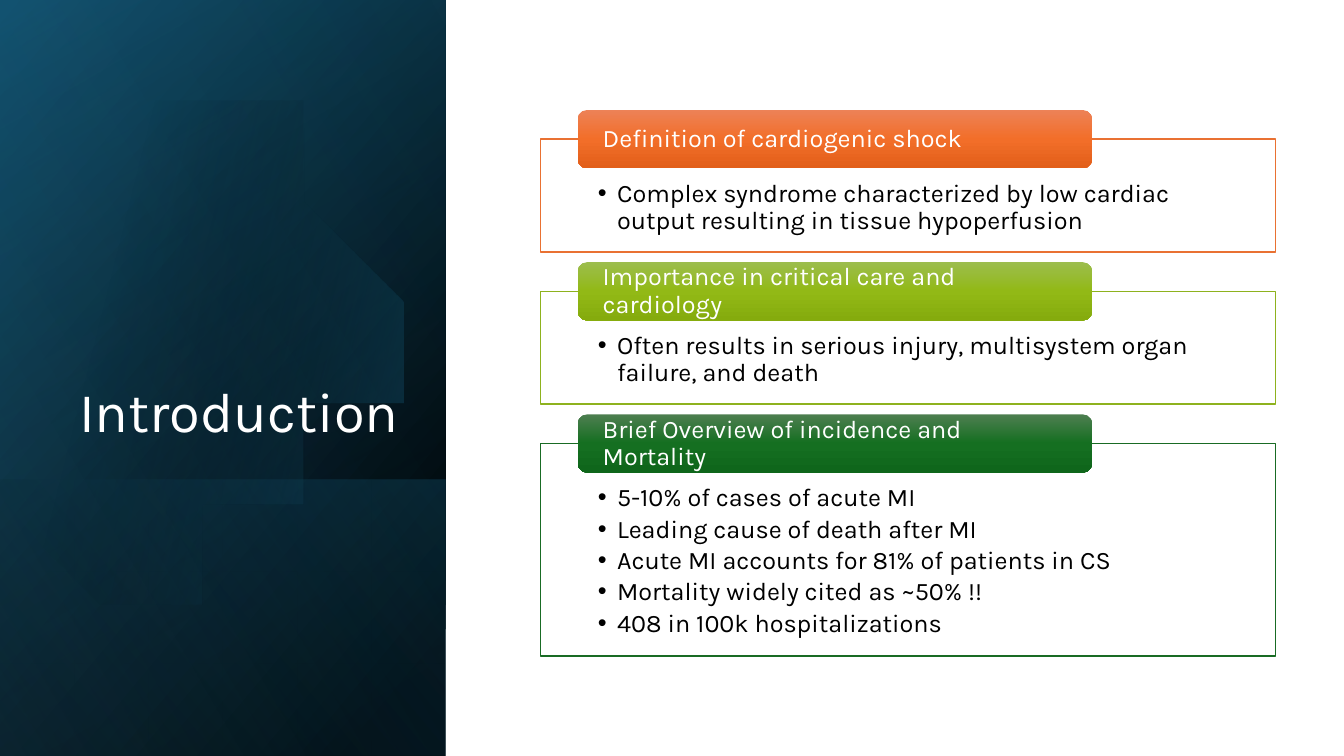
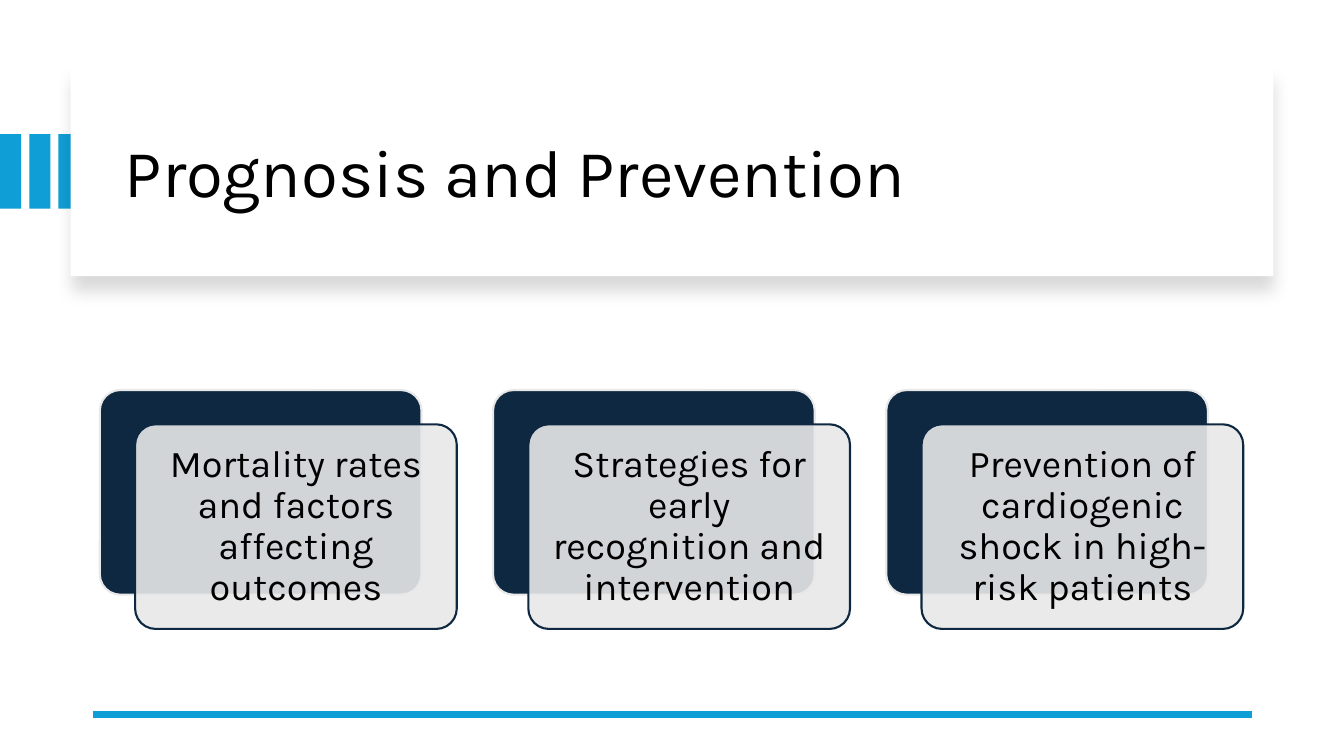
import math

from lxml import etree
from pptx import Presentation
from pptx.dml.color import RGBColor
from pptx.enum.shapes import MSO_CONNECTOR, MSO_SHAPE
from pptx.enum.text import MSO_ANCHOR, PP_ALIGN
from pptx.oxml import parse_xml
from pptx.oxml.ns import nsdecls, qn
from pptx.util import Inches, Pt

RECT, ROUNDED = MSO_SHAPE.RECTANGLE, MSO_SHAPE.ROUNDED_RECTANGLE
STRAIGHT = MSO_CONNECTOR.STRAIGHT
LEFT, CENTER, RIGHT = PP_ALIGN.LEFT, PP_ALIGN.CENTER, PP_ALIGN.RIGHT
TOP, MIDDLE, BOTTOM = MSO_ANCHOR.TOP, MSO_ANCHOR.MIDDLE, MSO_ANCHOR.BOTTOM

FONT = "Karla"
BLACK = RGBColor(0x00, 0x00, 0x00)
WHITE = RGBColor(0xFF, 0xFF, 0xFF)
PALE = RGBColor(0xE8, 0xE8, 0xE8)
NAVY = RGBColor(0x0E, 0x28, 0x41)
DEEP_TEAL = RGBColor(0x10, 0x48, 0x62)
TEAL = RGBColor(0x15, 0x60, 0x82)
SKY = RGBColor(0x46, 0xB1, 0xE1)
BLUE = RGBColor(0x0F, 0x9E, 0xD5)
ORANGE = RGBColor(0xE9, 0x71, 0x32)
LIME = RGBColor(0x8E, 0xB2, 0x1E)
GREEN = RGBColor(0x19, 0x6B, 0x24)
ORANGE_SHADES = (RGBColor(0xED, 0x82, 0x57), RGBColor(0xF2, 0x6E, 0x29),
                 RGBColor(0xE2, 0x5F, 0x1A))
LIME_SHADES = (RGBColor(0x9C, 0xBD, 0x4E), RGBColor(0x92, 0xB9, 0x16),
               RGBColor(0x85, 0xAB, 0x0D))
GREEN_SHADES = (RGBColor(0x4D, 0x7E, 0x50), RGBColor(0x15, 0x6F, 0x21),
                RGBColor(0x0F, 0x66, 0x1B))

INTRO_TOPICS = [
    ("Definition of cardiogenic shock", ORANGE, ORANGE_SHADES, 1.12,
     ["Complex syndrome\u00a0characterized by low cardiac output resulting in "
      "tissue hypoperfusion"]),
    ("Importance in critical care and cardiology", LIME, LIME_SHADES, 1.12,
     ["Often results in serious injury, multisystem organ failure, and death"]),
    ("Brief Overview of incidence and Mortality", GREEN, GREEN_SHADES, 2.11,
     ["5-10% of cases of acute MI",
      "Leading cause of death after MI",
      "Acute MI accounts for 81% of patients in CS",
      "Mortality widely cited as ~50% !!",
      "408 in 100k hospitalizations"]),
]
PROGNOSIS_CARDS = [
    "Mortality rates and factors affecting outcomes",
    "Strategies for early recognition and intervention",
    "Prevention of cardiogenic shock in high-risk patients",
]


def style(shape, fill=None, line=None, line_width=1.0):
    shape.shadow.inherit = False
    if fill is not None:
        shape.fill.solid()
        shape.fill.fore_color.rgb = fill
    if line is None:
        shape.line.fill.background()
    else:
        shape.line.color.rgb = line
        shape.line.width = Pt(line_width)
    return shape


def add_box(slide, kind, box, **look):
    shape = slide.shapes.add_shape(kind, *map(Inches, box))
    return style(shape, **look)


def fill_gradient(shape, stops, angle):
    """Fill with (position %, colour, opacity %) stops, angle clockwise."""
    shape.fill.gradient()
    stop_xml = "".join(
        f'<a:gs pos="{pos * 1000}"><a:srgbClr val="{color}">'
        f'<a:alpha val="{opacity * 1000}"/></a:srgbClr></a:gs>'
        for pos, color, opacity in stops)
    gradient = parse_xml(
        f'<a:gradFill {nsdecls("a")} rotWithShape="1"><a:gsLst>{stop_xml}</a:gsLst>'
        f'<a:lin ang="{angle * 60000}" scaled="0"/></a:gradFill>')
    properties = shape.element.spPr
    properties.replace(properties.find(qn("a:gradFill")), gradient)


def set_opacity(shape, percent):
    color = shape.element.spPr.find(f'{qn("a:solidFill")}/{qn("a:srgbClr")}')
    etree.SubElement(color, qn("a:alpha"), val=str(percent * 1000))


def add_soft_shadow(shape):
    effects = shape.element.spPr.find(qn("a:effectLst"))
    effects.append(parse_xml(
        f'<a:outerShdw {nsdecls("a")} blurRad="{Pt(11)}" dist="{Pt(10)}" '
        f'dir="5400000" algn="t" rotWithShape="0"><a:srgbClr val="{BLACK}">'
        '<a:alpha val="15000"/></a:srgbClr></a:outerShdw>'))


def add_bullet(paragraph, indent):
    properties = paragraph._p.get_or_add_pPr()
    properties.set("marL", str(Inches(indent)))
    properties.set("indent", str(-Inches(indent)))
    etree.SubElement(properties, qn("a:buFont"), typeface="Arial")
    etree.SubElement(properties, qn("a:buChar"), char="•")


def write(shape, lines, size, color, align=LEFT, anchor=MIDDLE,
          insets=(0.1, 0.05, 0.1, 0.05), bulleted=False):
    """Write one paragraph per line; insets are left, top, right, bottom."""
    frame = shape.text_frame
    frame.word_wrap = True
    frame.vertical_anchor = anchor
    (frame.margin_left, frame.margin_top,
     frame.margin_right, frame.margin_bottom) = map(Inches, insets)
    for index, line in enumerate(lines):
        paragraph = frame.add_paragraph() if index else frame.paragraphs[0]
        paragraph.alignment = align
        paragraph.line_spacing = 0.9
        if bulleted:
            paragraph.space_after = Pt(3)
            add_bullet(paragraph, 0.19)
        run = paragraph.add_run()
        run.text = line
        run.font.name = FONT
        run.font.size = Pt(size)
        run.font.color.rgb = color


def add_title(slide, box, text, size, color, **layout):
    title = slide.shapes.add_textbox(*map(Inches, box))
    write(title, [text], size, color, **layout)


def add_disc(slide, center_x, center_y, radius):
    """Draw a disc cut off by the left edge of the slide."""
    cut = math.acos(-center_x / radius)
    steps = 90
    angles = [cut * (2 * step / steps - 1) for step in range(steps + 1)]
    points = [(center_x + radius * math.cos(a), center_y + radius * math.sin(a))
              for a in angles]
    outline = slide.shapes.build_freeform(*points[0], scale=Inches(1))
    outline.add_line_segments(points[1:], close=True)
    disc = style(outline.convert_to_shape())
    fill_gradient(disc, [(29, BLACK, 0), (100, TEAL, 43)], 14)


def add_gradient_panel(slide, box):
    left, top, width, height = box
    band_height = 2.74
    band = (left, top + height - band_height, width, band_height)

    def add_layer(area, stops, angle):
        fill_gradient(add_box(slide, RECT, area), stops, angle)

    add_layer(box, [(8, BLACK, 100), (100, DEEP_TEAL, 100)], 220)
    add_layer(box, [(0, BLACK, 0), (99, TEAL, 46)], 240)
    add_layer(band, [(2, TEAL, 29), (100, BLACK, 30)], 140)
    add_disc(slide, left + 1.43, top + 3.39, 2.28)
    add_layer(box, [(0, BLACK, 0), (99, SKY, 11)], 150)


def add_topic(slide, box, heading, color, shades, bullets):
    left, top, width, _ = box
    frame = add_box(slide, RECT, box, fill=WHITE, line=color)
    write(frame, bullets, 18, BLACK, anchor=TOP,
          insets=(0.57, 0.41, 0.57, 0.14), bulleted=True)
    tab = add_box(slide, ROUNDED, (left + 0.37, top - 0.29, 0.7 * width, 0.58))
    fill_gradient(tab, [(pos, shade, 100) for pos, shade in zip((0, 50, 100), shades)], 90)
    write(tab, [heading], 18, WHITE, insets=(0.22, 0, 0.2, 0))


def add_card(slide, box, text):
    left, top, width, height = box
    back = add_box(slide, ROUNDED, box, fill=NAVY, line=PALE, line_width=1.5)
    front = add_box(slide, ROUNDED, (left + 0.35, top + 0.34, width, height),
                    fill=PALE, line=NAVY, line_width=1.5)
    for layer in (back, front):
        layer.adjustments[0] = 0.1
    set_opacity(front, 90)
    write(front, [text], 27, BLACK, align=CENTER, insets=(0.17,) * 4)


def add_title_panel(slide, box, text):
    left, top, width, height = box
    for index in range(3):
        add_box(slide, RECT, (0.29 * index, top + 0.66, 0.21, 0.74), fill=BLUE)
    add_soft_shadow(add_box(slide, RECT, box, fill=WHITE))
    add_title(slide, (left + 0.44, top + 0.22, width - 0.8, 1.7), text, 48, BLACK)


def add_footer_rule(slide, left, right, y):
    rule = slide.shapes.add_connector(
        STRAIGHT, *map(Inches, (left, y, right, y)))
    rule.line.color.rgb = BLUE
    rule.line.width = Pt(4.5)
    etree.SubElement(rule._element.spPr, qn("a:effectLst"))


def build_introduction(slide):
    add_gradient_panel(slide, (0, 0, 4.42, 7.5))
    add_title(slide, (0.64, 1.84, 3.41, 2.62), "Introduction", 40, WHITE,
              align=RIGHT, anchor=BOTTOM)
    top = 1.38
    for heading, color, shades, height, bullets in INTRO_TOPICS:
        add_topic(slide, (5.36, top, 7.29, height), heading, color, shades, bullets)
        top += height + 0.39


def build_prognosis(slide):
    add_title_panel(slide, (0.7, 0.67, 11.93, 2.07), "Prognosis and Prevention")
    add_footer_rule(slide, 0.92, 12.42, 7.09)
    for index, text in enumerate(PROGNOSIS_CARDS):
        add_card(slide, (0.99 + 3.9 * index, 3.87, 3.19, 2.03), text)


def main():
    deck = Presentation()
    deck.slide_width, deck.slide_height = Inches(13.33), Inches(7.5)
    blank = deck.slide_layouts[6]
    for build in (build_introduction, build_prognosis):
        build(deck.slides.add_slide(blank))
    deck.save("out.pptx")


if __name__ == "__main__":
    main()
